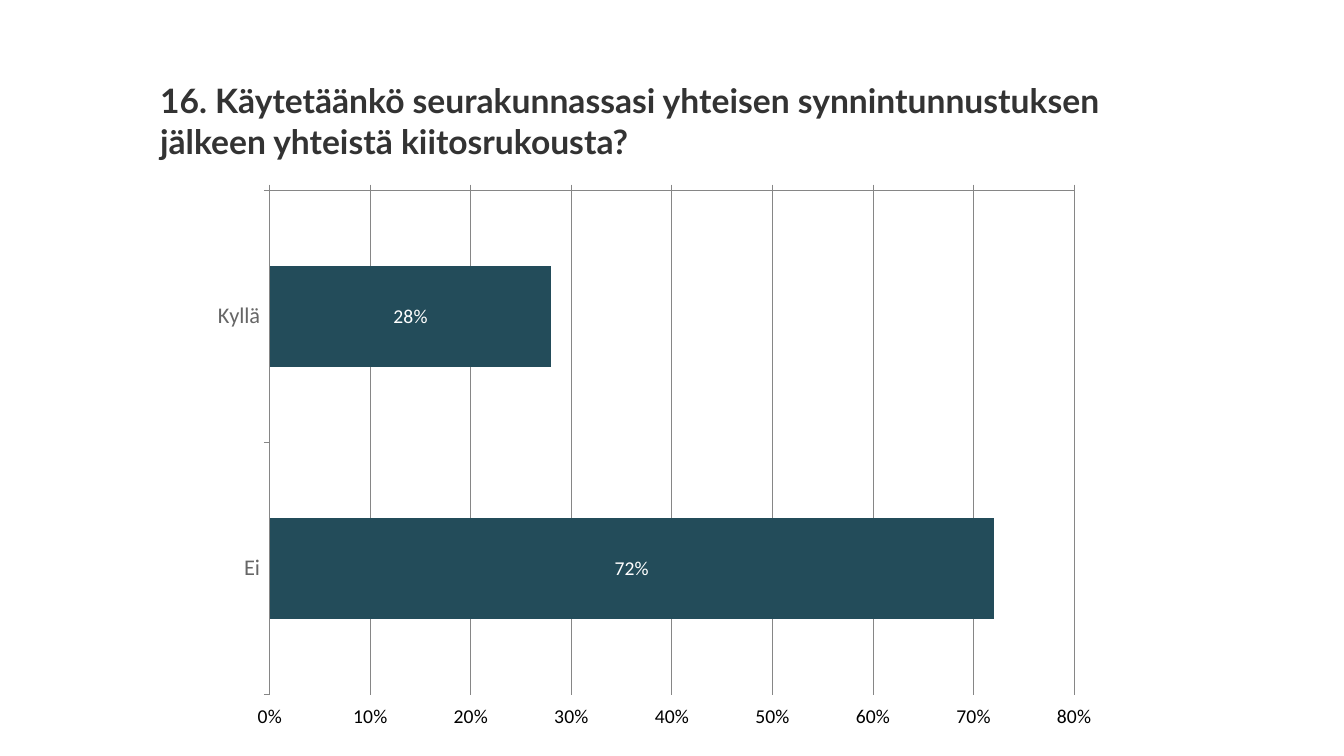
from pptx import Presentation
from pptx.chart.data import CategoryChartData
from pptx.dml.color import RGBColor
from pptx.enum.chart import XL_CHART_TYPE as ChartType
from pptx.enum.chart import XL_LABEL_POSITION as LabelPosition
from pptx.enum.chart import XL_TICK_LABEL_POSITION as TickLabels
from pptx.enum.chart import XL_TICK_MARK as TickMark
from pptx.enum.text import MSO_ANCHOR as Anchor
from pptx.util import Pt

COLORS = {
    "question": "333333",
    "answer": "666666",
    "scale": "000000",
    "bar": "234C5A",
    "share": "FFFFFF",
    "grid": "868686",
}
QUESTION = (
    "16. Käytetäänkö seurakunnassasi yhteisen synnintunnustuksen "
    "jälkeen yhteistä kiitosrukousta?"
)
SHARES = {"Kyllä": 0.28, "Ei": 0.72}


def color(key):
    return RGBColor.from_string(COLORS[key])


def apply(target, values):
    for name, value in values.items():
        setattr(target, name, value)


def style_font(font, key, **values):
    apply(font, values)
    font.color.rgb = color(key)


def style_line(line):
    line.color.rgb = color("grid")
    line.width = Pt(0.75)


def add_question(slide, left, top, width, height):
    question = slide.shapes.add_textbox(Pt(left), Pt(top), Pt(width), Pt(height))
    frame = question.text_frame
    apply(frame, {"word_wrap": True, "vertical_anchor": Anchor.MIDDLE})
    run = frame.paragraphs[0].add_run()
    run.text = QUESTION
    style_font(run.font, "question", name="Lato", size=Pt(24), bold=True)


def style_axes(chart):
    answers, scale = chart.category_axis, chart.value_axis
    apply(answers, {
        "reverse_order": True,
        "tick_label_position": TickLabels.LOW,
        "major_tick_mark": TickMark.OUTSIDE,
    })
    style_font(answers.tick_labels.font, "answer", name="Calibri", size=Pt(16))
    apply(scale, {
        "minimum_scale": 0,
        "maximum_scale": 0.8,
        "major_unit": 0.1,
        "has_major_gridlines": True,
        "tick_label_position": TickLabels.HIGH,
        "major_tick_mark": TickMark.OUTSIDE,
    })
    apply(scale.tick_labels, {"number_format": "0%", "number_format_is_linked": False})
    for line in (answers.format.line, scale.format.line, scale.major_gridlines.format.line):
        style_line(line)


def style_bars(plot):
    apply(plot, {"gap_width": 150, "vary_by_categories": False, "has_data_labels": True})
    apply(plot.data_labels, {
        "show_value": True,
        "number_format": "0%",
        "number_format_is_linked": False,
        "position": LabelPosition.CENTER,
    })
    style_font(plot.data_labels.font, "share", name="Calibri", size=Pt(14))
    bars = plot.series[0]
    bars.invert_if_negative = False
    bars.format.fill.solid()
    bars.format.fill.fore_color.rgb = color("bar")


def add_shares(slide, left, top, width, height):
    data = CategoryChartData(number_format="0%")
    data.categories = list(SHARES)
    data.add_series("Series 1", list(SHARES.values()))
    chart = slide.shapes.add_chart(
        ChartType.BAR_CLUSTERED, Pt(left), Pt(top), Pt(width), Pt(height), data
    ).chart
    apply(chart, {"has_legend": False, "has_title": False})
    style_font(chart.font, "scale", name="Calibri", size=Pt(14))
    style_axes(chart)
    style_bars(chart.plots[0])


def main():
    deck = Presentation()
    apply(deck, {"slide_width": Pt(960), "slide_height": Pt(540)})
    slide = deck.slides.add_slide(deck.slide_layouts[6])
    add_question(slide, 107.3, 53.3, 694, 65.5)
    add_shares(slide, 142.6, 128.2, 650, 400.3)
    deck.save("out.pptx")


if __name__ == "__main__":
    main()
